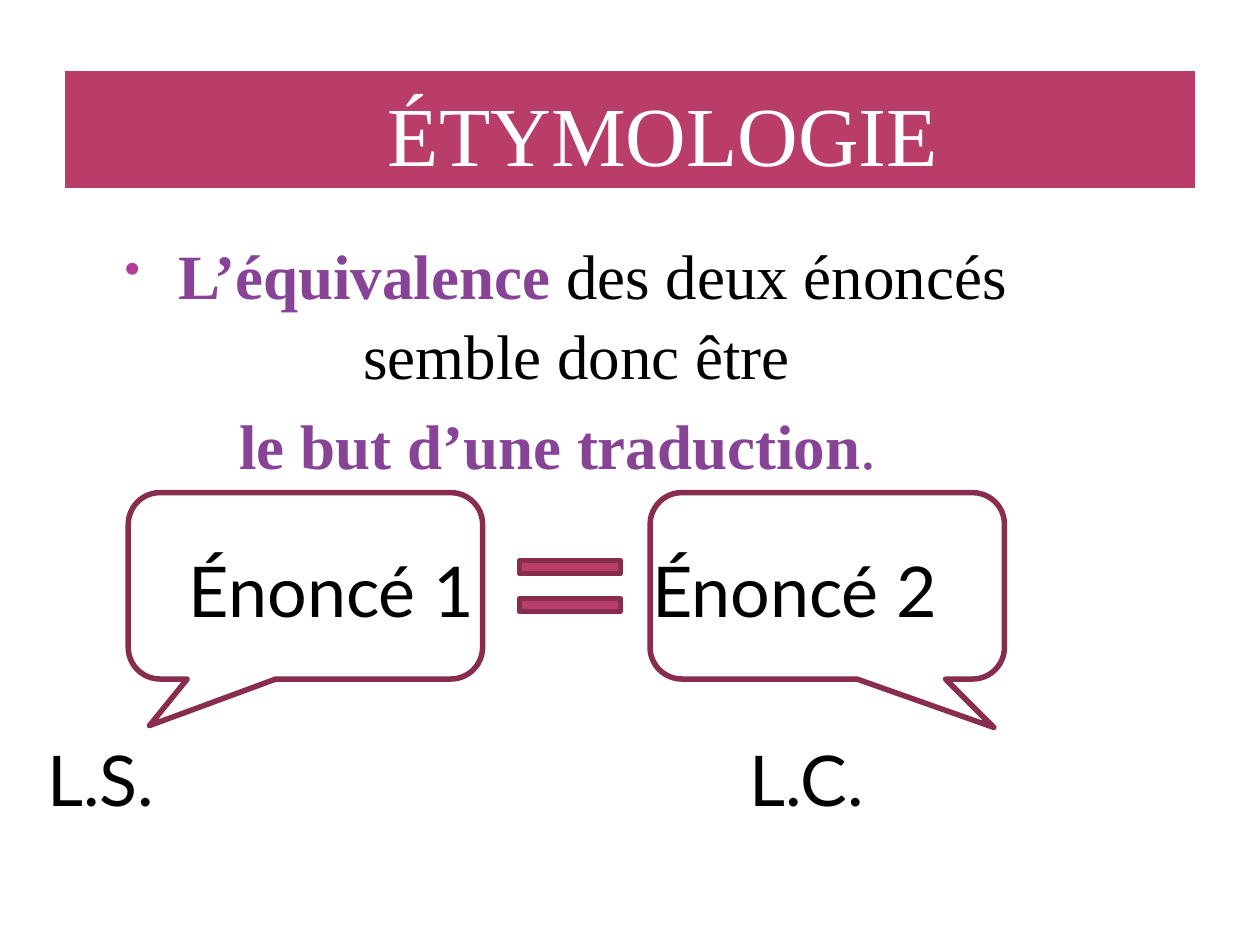
from lxml.etree import SubElement
from pptx import Presentation
from pptx.dml.color import RGBColor
from pptx.enum.shapes import MSO_SHAPE
from pptx.enum.text import MSO_ANCHOR, PP_ALIGN
from pptx.oxml.ns import qn
from pptx.util import Pt

ROSE = RGBColor(0xB8, 0x3D, 0x68)
DARK_ROSE = RGBColor(0x88, 0x2D, 0x4D)
PURPLE = RGBColor(0x87, 0x43, 0x96)
BULLET_PINK = RGBColor(0xB1, 0x3F, 0x9A)
BLACK = RGBColor(0, 0, 0)
WHITE = RGBColor(255, 255, 255)

SERIF = "Times New Roman"
SANS = "Lato"
TITLE = {"name": SERIF, "size": Pt(48), "color": WHITE}
BODY = {"name": SERIF, "size": Pt(36), "color": BLACK}
KEY = {**BODY, "color": PURPLE, "bold": True}
LABEL = {"name": SANS, "size": Pt(40), "color": BLACK}


class SlideBuilder:
    def __init__(self, slide):
        self.slide = slide

    def shape(self, preset, box, fill=None, line=DARK_ROSE, width=3.15, adjustments=()):
        shape = self.slide.shapes.add_shape(preset, *map(Pt, box))
        shape.shadow.inherit = False
        if fill is None:
            shape.fill.background()
        else:
            shape.fill.solid()
            shape.fill.fore_color.rgb = fill
        shape.line.color.rgb = line
        shape.line.width = Pt(width)
        for index, value in enumerate(adjustments):
            shape.adjustments[index] = value
        return shape

    def text_box(self, box, inset=(0, 0)):
        frame = self.slide.shapes.add_textbox(*map(Pt, box)).text_frame
        frame.word_wrap = True
        frame.margin_left = frame.margin_right = Pt(inset[0])
        frame.margin_top = frame.margin_bottom = Pt(inset[1])
        return frame

    def run(self, paragraph, text, style):
        run = paragraph.add_run()
        run.text = text
        for key, value in style.items():
            if key == "color":
                run.font.color.rgb = value
            else:
                setattr(run.font, key, value)

    def indent(self, paragraph, left, first=0):
        properties = paragraph._p.get_or_add_pPr()
        properties.set("marL", str(Pt(left)))
        properties.set("indent", str(Pt(first)))
        return properties

    def bullet(self, paragraph, color, percent):
        properties = self.indent(paragraph, 21.6, -21.6)
        bullet_color = SubElement(properties, qn("a:buClr"))
        SubElement(bullet_color, qn("a:srgbClr"), val=str(color))
        SubElement(properties, qn("a:buSzPct"), val=str(percent * 1000))
        SubElement(properties, qn("a:buChar"), char="•")

    def title(self, text, box):
        frame = self.shape(MSO_SHAPE.RECTANGLE, box, ROSE, WHITE, 2.5).text_frame
        frame.vertical_anchor = MSO_ANCHOR.BOTTOM
        paragraph = frame.paragraphs[0]
        self.indent(paragraph, 38)
        paragraph.alignment = PP_ALIGN.CENTER
        self.run(paragraph, text, TITLE)

    def statement(self, box):
        frame = self.text_box(box, (7.2, 3.6))
        equivalence, goal = frame.paragraphs[0], frame.add_paragraph()
        self.bullet(equivalence, BULLET_PINK, 73)
        goal.space_before = Pt(6)
        for paragraph, runs in (
            (equivalence, [(" ", BODY), ("L’équivalence ", KEY),
                           ("des deux énoncés semble donc être ", BODY)]),
            (goal, [("le but d’une traduction", KEY),
                    (". ", {**KEY, "bold": False})]),
        ):
            paragraph.alignment = PP_ALIGN.CENTER
            paragraph.line_spacing = 1.05
            for text, style in runs:
                self.run(paragraph, text, style)

    def label(self, text, left, top):
        frame = self.text_box((left, top, 180, 49))
        self.run(frame.paragraphs[0], text, LABEL)

    def callout(self, left, tail):
        self.shape(MSO_SHAPE.ROUNDED_RECTANGULAR_CALLOUT, (left, 281.5, 202.5, 106.5),
                   adjustments=(*tail, 0.17))


def main():
    presentation = Presentation()
    presentation.slide_width, presentation.slide_height = Pt(720), Pt(540)
    builder = SlideBuilder(presentation.slides.add_slide(presentation.slide_layouts[6]))

    builder.title("ÉTYMOLOGIE", (36, 39.6, 648, 69))
    builder.statement((22.3, 129.6, 602, 145))
    builder.shape(MSO_SHAPE.MATH_EQUAL, (286.5, 304, 78.5, 62), ROSE,
                  adjustments=(0.12, 0.23))
    for left, tail in ((73.3, (-0.44, 0.75)), (371.5, (0.47, 0.76))):
        builder.callout(left, tail)
    for text, left, top in (
        ("Énoncé 1", 108, 313),
        ("Énoncé 2", 372.6, 313),
        ("L.S.", 27, 421),
        ("L.C.", 428.5, 421),
    ):
        builder.label(text, left, top)

    presentation.save("out.pptx")


if __name__ == "__main__":
    main()
